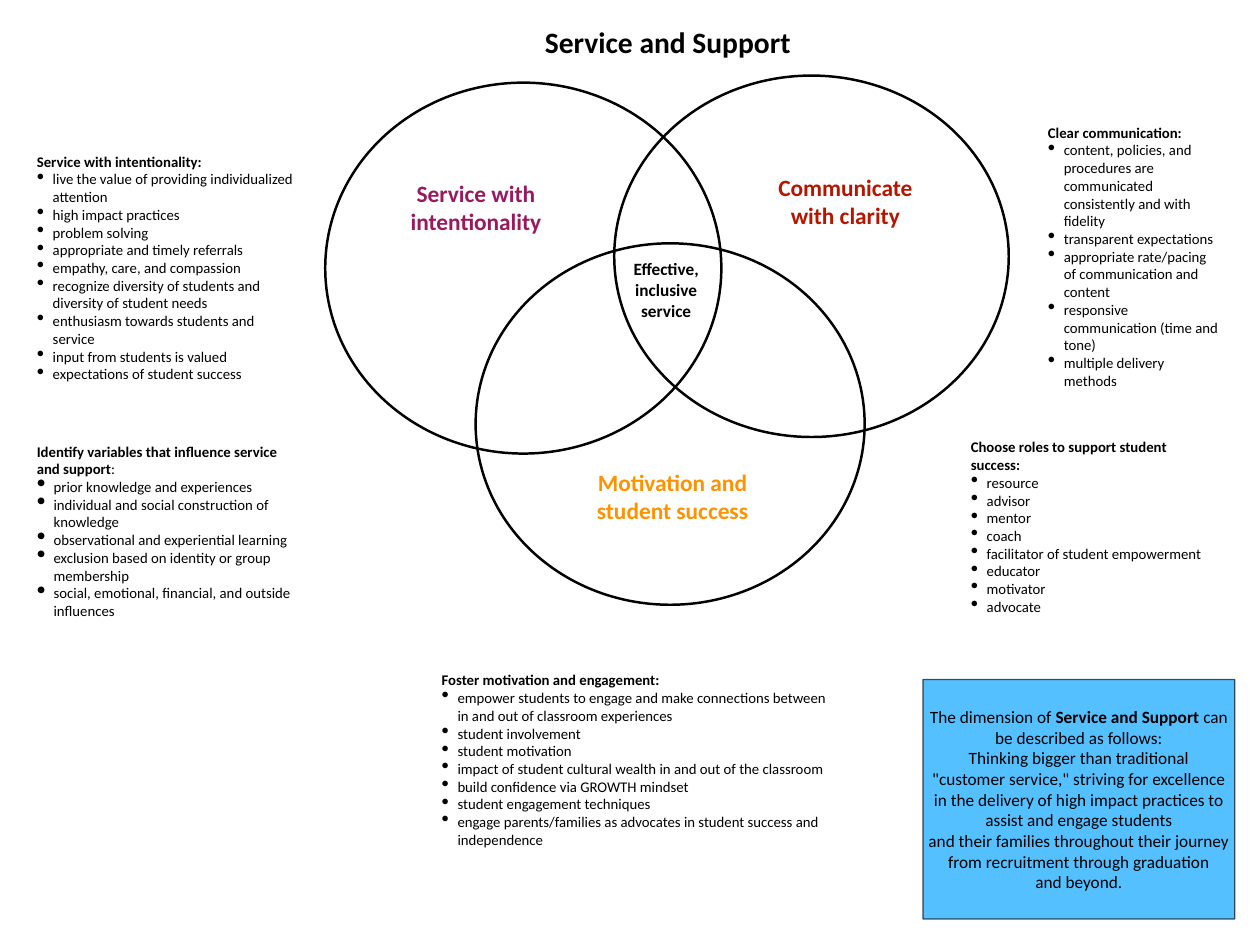
"""Build the Service and Support Venn diagram slide on a 160 by 120 grid."""
from lxml.etree import SubElement
from pptx import Presentation
from pptx.dml.color import RGBColor
from pptx.enum.shapes import MSO_SHAPE
from pptx.enum.text import MSO_ANCHOR, PP_ALIGN
from pptx.oxml.ns import qn
from pptx.util import Inches, Pt

COLORS = {"ink": "000000", "red": "B51600", "plum": "99195E", "orange": "FE9301", "blue": "00A2FF"}

prs = Presentation()
prs.slide_width, prs.slide_height = Inches(14.22), Inches(10.67)
COL, ROW = prs.slide_width / 160, prs.slide_height / 120
s = prs.slides.add_slide(prs.slide_layouts[6])


def place(x, y, w, h):
    return int(x * COL), int(y * ROW), int(w * COL), int(h * ROW)


def write(sp, paragraphs, size, color="ink", align=PP_ALIGN.CENTER, anchor=MSO_ANCHOR.MIDDLE,
          wrap=True, bullet=None):
    """Fill a shape with paragraphs; asterisks switch bold on and off."""
    tf = sp.text_frame
    frame = dict(word_wrap=wrap, vertical_anchor=anchor)
    frame.update({f"margin_{side}": Inches(0.06) for side in ("left", "right", "top", "bottom")})
    for name, value in frame.items():
        setattr(tf, name, value)
    for n, text in enumerate(paragraphs):
        p = tf.add_paragraph() if n else tf.paragraphs[0]
        p.alignment = align
        for i, piece in enumerate(text.split("*")):
            for j, line in enumerate(piece.split("\n")):
                if j:
                    p.add_line_break()
                if not line:
                    continue
                r = p.add_run()
                r.text = line
                for name, value in dict(name="Calibri", size=Pt(size), bold=i % 2 == 1).items():
                    setattr(r.font, name, value)
                r.font.color.rgb = RGBColor.from_string(COLORS[color])
        if bullet and n:
            indent, percent = bullet
            pPr = p._p.get_or_add_pPr()
            pPr.set("marL", str(Inches(indent)))
            pPr.set("indent", str(-Inches(indent)))
            SubElement(pPr, qn("a:buSzPct")).set("val", str(percent * 1000))
            SubElement(pPr, qn("a:buChar")).set("char", "•")


circles = [(41.3, 10.5, 50.3, 47.1), (78, 9.6, 50.1, 45.9), (60.4, 30.9, 49.4, 45.9)]
for box in circles:
    sp = s.shapes.add_shape(MSO_SHAPE.OVAL, *place(*box))
    sp.shadow.inherit = False
    sp.fill.background()
    sp.line.color.rgb = RGBColor.from_string(COLORS["ink"])
    sp.line.width = Pt(2)

labels = [
    ((64.3, 2.4, 41, 5.7), ["*Service and Support*"], 24, "ink", False),
    ((77.3, 32.2, 14.6, 9.2), ["*Effective,*", "*inclusive service*"], 14, "ink", True),
    ((95.7, 21.4, 23.3, 8.4), ["*Communicate with clarity*"], 19, "red", True),
    ((48.8, 22.1, 23.3, 8.4), ["*Service with intentionality*"], 19, "plum", True),
    ((71, 58.8, 28.8, 8.4), ["*Motivation and student success*"], 19, "orange", True),
]
for box, paragraphs, size, color, wrap in labels:
    write(s.shapes.add_textbox(*place(*box)), paragraphs, size, color, wrap=wrap)

lists = [
    ((55.4, 82.2, 52, 26.2), MSO_ANCHOR.BOTTOM, (0.18, 145), [
        "*Foster motivation and engagement:*",
        "empower students to engage and make connections between in and out of classroom experiences",
        "student involvement",
        "student motivation",
        "impact of student cultural wealth in and out of the classroom",
        "build confidence via GROWTH mindset",
        "student engagement techniques",
        "engage parents/families as advocates in student success and independence",
    ]),
    ((4, 18.7, 33.9, 36.2), MSO_ANCHOR.TOP, (0.18, 145), [
        "*Service with intentionality:*",
        "live the value of providing individualized attention",
        "high impact practices",
        "problem solving",
        "appropriate and timely referrals",
        "empathy, care, and compassion",
        "recognize diversity of students and diversity of student needs",
        "enthusiasm towards students and service",
        "input from students is valued",
        "expectations of student success",
    ]),
    ((132.4, 16, 23.3, 33.1), MSO_ANCHOR.MIDDLE, (0.18, 145), [
        "*Clear communication:*",
        "content, policies, and procedures are communicated consistently and with fidelity",
        "transparent expectations",
        "appropriate rate/pacing of communication and content",
        "responsive communication (time and tone)",
        "multiple delivery methods",
    ]),
    ((4, 55.5, 33.8, 26.2), MSO_ANCHOR.TOP, (0.19, 175), [
        "*Identify variables that influence service and support*:",
        "prior knowledge and experiences",
        "individual and social construction of knowledge",
        "observational and experiential learning",
        "exclusion based on identity or group membership",
        "social, emotional, financial, and outside influences",
    ]),
    ((122.6, 54.9, 31.2, 24), MSO_ANCHOR.MIDDLE, (0.18, 145), [
        "*Choose roles to support student success:*",
        "resource",
        "advisor",
        "mentor",
        "coach",
        "facilitator of student empowerment",
        "educator",
        "motivator",
        "advocate",
    ]),
]
for box, anchor, bullet, paragraphs in lists:
    write(s.shapes.add_textbox(*place(*box)), paragraphs, 12, align=PP_ALIGN.LEFT,
          anchor=anchor, bullet=bullet)

summary = s.shapes.add_shape(MSO_SHAPE.RECTANGLE, *place(117.2, 86.3, 39.6, 30.4))
summary.shadow.inherit = False
summary.fill.solid()
summary.fill.fore_color.rgb = RGBColor.from_string(COLORS["blue"])
summary.line.color.rgb = RGBColor.from_string(COLORS["ink"])
summary.line.width = Pt(1)
for color in summary._element.spPr.iter(qn("a:srgbClr")):
    SubElement(color, qn("a:alpha")).set("val", "67000")
write(summary, [
    "The dimension of *Service and Support *can be described as follows:",
    "Thinking bigger than traditional\n\"customer service,\" striving for excellence "
    "in the delivery of high impact practices to assist and engage students\n"
    "and their families throughout their journey from recruitment through graduation",
    "and beyond.",
], 14)

prs.save("out.pptx")
